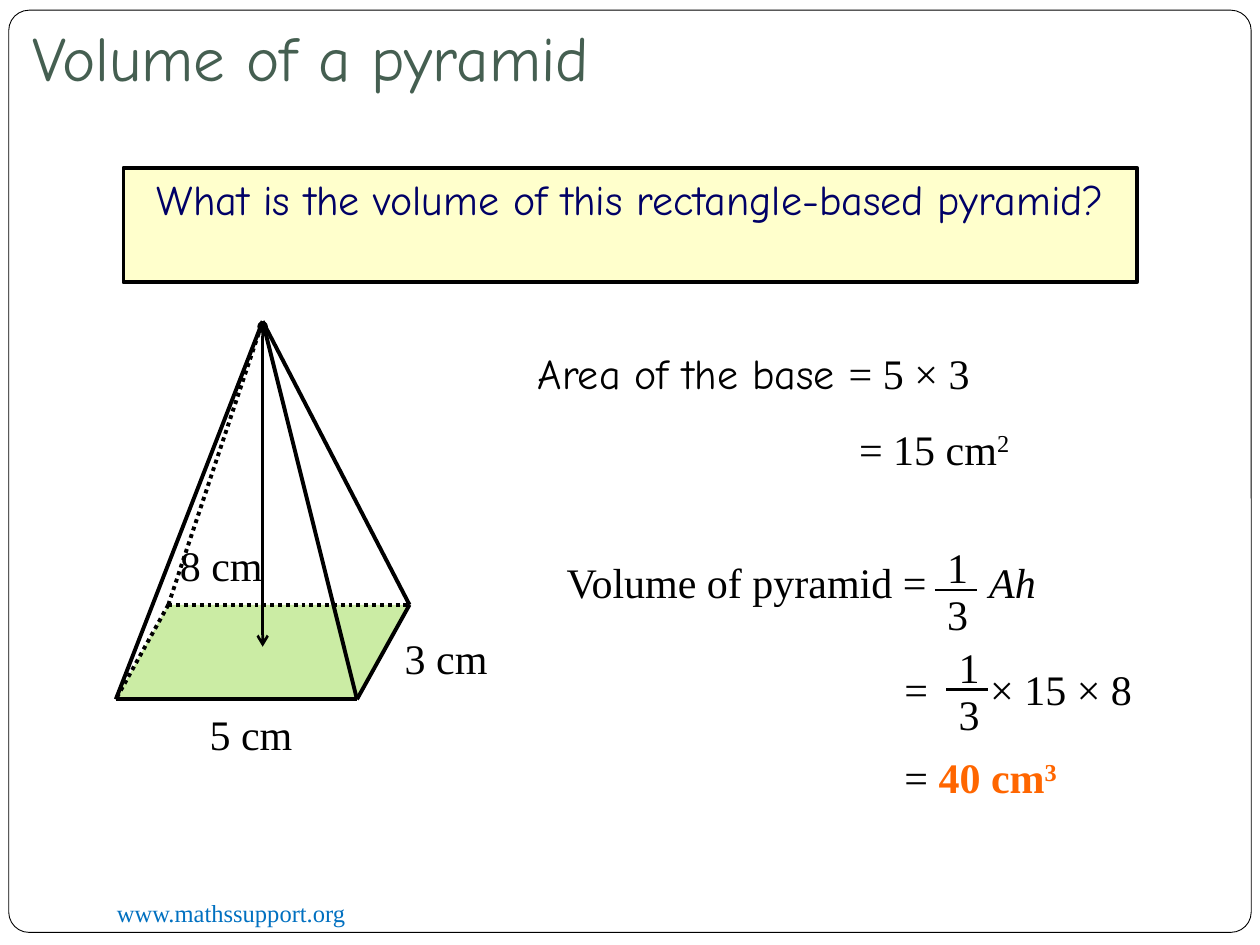
from pptx import Presentation
from pptx.dml.color import RGBColor
from pptx.enum.dml import MSO_LINE
from pptx.enum.shapes import MSO_CONNECTOR, MSO_SHAPE
from pptx.enum.text import MSO_ANCHOR, PP_ALIGN
from pptx.oxml.ns import qn
from pptx.util import Pt
from lxml.etree import SubElement

BLACK = RGBColor(0, 0, 0)
WHITE = RGBColor(0xFF, 0xFF, 0xFF)
CREAM = RGBColor(0xFF, 0xFF, 0xCC)
NAVY = RGBColor(0, 0, 0x66)
DARK_GREEN = RGBColor(0x45, 0x5F, 0x51)
LIGHT_GREEN = RGBColor(0xCB, 0xEC, 0xA4)
LINK_BLUE = RGBColor(0, 0x70, 0xC0)
ORANGE = RGBColor(0xFF, 0x66, 0)
SERIF = "Times New Roman"
COMIC = "Comic Neue"


def add_span(para, text, superscript=False):
    span = para.add_run()
    span.text = text
    if superscript:
        span.font._element.set("baseline", "30000")
    return span


def style_para(para, size=24, font=SERIF, color=BLACK):
    para.font.size = Pt(size)
    para.font.name = font
    para.font.color.rgb = color


def add_text(page, left, top, width, height, text, tab=None, **style):
    """Add a one-line text box, with an optional tab stop, and return its paragraph."""
    box = page.shapes.add_textbox(Pt(left), Pt(top), Pt(width), Pt(height))
    box.text_frame.word_wrap = True
    para = box.text_frame.paragraphs[0]
    if tab:
        tabs = SubElement(para._p.get_or_add_pPr(), qn("a:tabLst"))
        SubElement(tabs, qn("a:tab"), pos=str(Pt(tab)), algn="l")
    add_span(para, text)
    style_para(para, **style)
    return para


def add_filled(page, kind, left, top, width, height, fill, line_width=None):
    shape = page.shapes.add_shape(kind, Pt(left), Pt(top), Pt(width), Pt(height))
    shape.shadow.inherit = False
    shape.fill.solid()
    shape.fill.fore_color.rgb = fill
    if line_width:
        shape.line.color.rgb = BLACK
        shape.line.width = Pt(line_width)
    else:
        shape.line.fill.background()
    return shape


def add_line(page, start, end, width=2.25, dotted=False, arrows=False):
    line = page.shapes.add_connector(
        MSO_CONNECTOR.STRAIGHT, *(Pt(value) for value in (*start, *end)))
    line.line.color.rgb = BLACK
    line.line.width = Pt(width)
    if dotted:
        line.line.dash_style = MSO_LINE.ROUND_DOT
    if arrows:
        for tag in ("a:headEnd", "a:tailEnd"):
            SubElement(line.line._get_or_add_ln(), qn(tag), type="arrow")
    SubElement(line._element.spPr, qn("a:effectLst"))


def draw_frame(page, left, top, width, height):
    frame = add_filled(page, MSO_SHAPE.ROUNDED_RECTANGLE,
                       left, top, width, height, WHITE, 0.5)
    frame.adjustments[0] = 0.022
    add_text(page, left + 54.7, top + 504, 234, 24.5, "www.mathssupport.org",
             size=14, color=LINK_BLUE)


def draw_title(page, left, top, width, height):
    para = add_text(page, left, top, width, height, "Volume of a pyramid",
                    size=36, font=COMIC, color=DARK_GREEN)
    frame = para._parent
    frame.vertical_anchor = MSO_ANCHOR.BOTTOM
    frame.margin_bottom = Pt(7.2)


def draw_question(page, left, top, width, height):
    panel = add_filled(page, MSO_SHAPE.RECTANGLE, left, top, width, height, CREAM, 2.25)
    panel.text_frame.word_wrap = True
    panel.text_frame.vertical_anchor = MSO_ANCHOR.TOP
    para = panel.text_frame.paragraphs[0]
    para.alignment = PP_ALIGN.CENTER
    add_span(para, "What is the volume of this rectangle-based pyramid?")
    style_para(para, font=COMIC, color=NAVY)


def draw_pyramid(page, left, top, width, height):
    depth, skew = 54, 30
    right, bottom = left + width, top + height
    back = bottom - depth
    apex = (left + width / 2, top)
    front_left, front_right = (left, bottom), (right - skew, bottom)
    back_left, back_right = (left + skew, back), (right, back)

    base = add_filled(page, MSO_SHAPE.PARALLELOGRAM, left, back, width, depth, LIGHT_GREEN)
    base.adjustments[0] = skew / depth
    add_filled(page, MSO_SHAPE.OVAL, apex[0] - 3, top, 6, 6, BLACK)
    for start, end in ((front_left, front_right), (front_right, back_right),
                       (front_left, apex), (back_right, apex), (front_right, apex)):
        add_line(page, start, end)
    for corner in (back_right, front_left, apex):
        add_line(page, back_left, corner, dotted=True)
    add_line(page, (apex[0], top + 2), (apex[0], bottom - 30), 1.5, arrows=True)

    for text, x, y in (("8 cm", 29.5, 121), ("5 cm", 46.5, 217.5), ("3 cm", 158, 174.5)):
        add_text(page, left + x, top + y, 67.7, 36.5, text)


def draw_third(page, left, top):
    add_text(page, left, top, 29.5, 36.5, "1")
    add_line(page, (left, top + 31), (left + 24, top + 31), 1.5)
    add_text(page, left, top + 26.6, 29.5, 36.5, "3")


def draw_working(page, left, top):
    area = add_text(page, left, top, 288.7, 36, "Area of the base ")
    area.runs[0].font.name = COMIC
    add_span(area, "= 5 × 3")
    squared = add_text(page, left + 183.6, top + 43.3, 109.5, 36, "= 15 cm")
    add_span(squared, "2", superscript=True)

    formula = add_text(page, left + 16.5, top + 119.3, 292, 36.5,
                       "Volume of pyramid =\t", tab=241.5)
    add_span(formula, "Ah").font.italic = True
    draw_third(page, left + 234, top + 111)

    equals = left + 209.5
    add_text(page, equals, top + 180.7, 156.3, 36, "=\t× 15 × 8", tab=49)
    draw_third(page, left + 240.5, top + 168)

    answer = add_text(page, equals, top + 231, 115.2, 36, "= ")
    for span in (add_span(answer, "40 cm"), add_span(answer, "3", superscript=True)):
        span.font.bold = True
        span.font.color.rgb = ORANGE


def main():
    deck = Presentation()
    deck.slide_width, deck.slide_height = Pt(720), Pt(540)
    page = deck.slides.add_slide(deck.slide_layouts[6])
    draw_frame(page, 5, 5.8, 710, 527)
    draw_question(page, 70.6, 95.8, 579, 65.5)
    draw_title(page, 11.5, 11.5, 579, 49.7)
    draw_pyramid(page, 66.2, 183.6, 167.8, 216)
    draw_working(page, 300.2, 195.1)
    deck.save("out.pptx")


if __name__ == "__main__":
    main()
